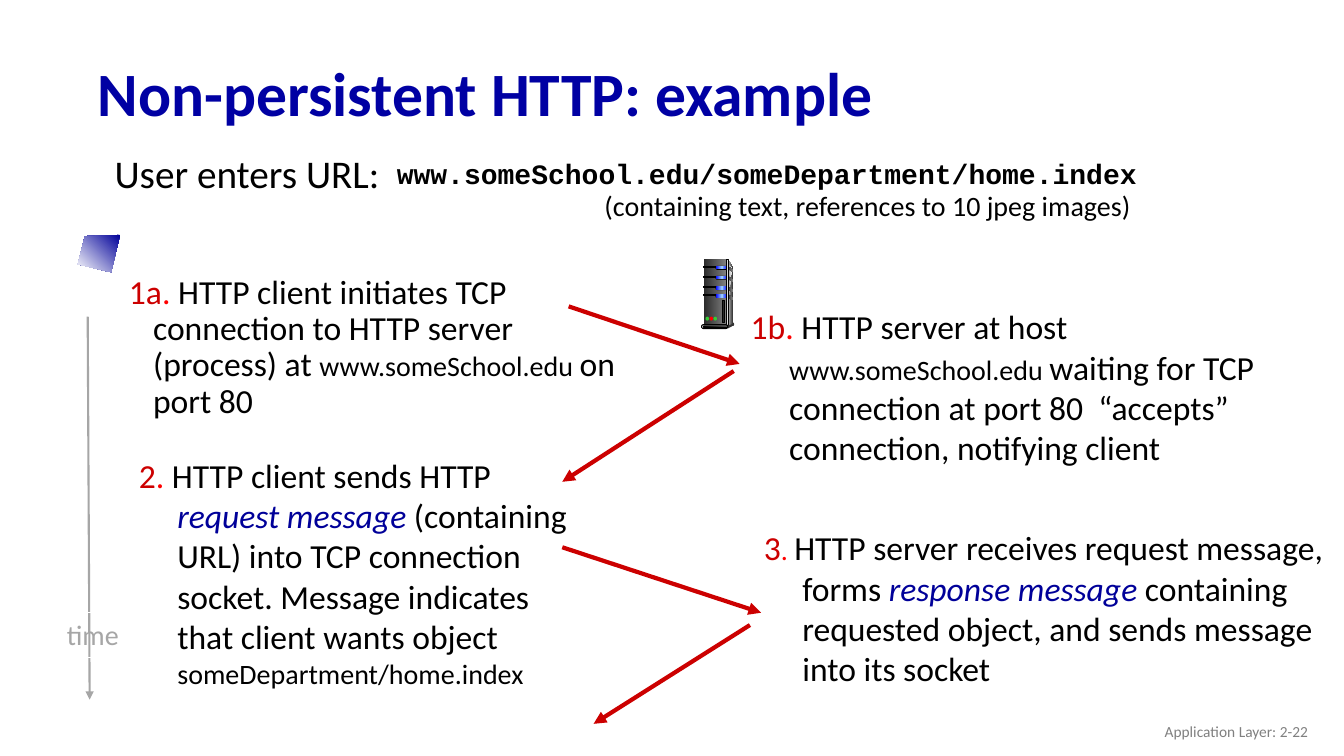
from lxml.etree import SubElement
from pptx import Presentation
from pptx.dml.color import RGBColor
from pptx.enum.shapes import MSO_CONNECTOR, MSO_SHAPE
from pptx.enum.text import MSO_ANCHOR, PP_ALIGN
from pptx.oxml.ns import qn
from pptx.util import Cm, Pt

COLORS = {
    "title": "0000A3", "black": "000000", "navy": "000099", "white": "FFFFFF",
    "step": "CC0000", "red": "FF0000", "green": "33CC33", "time": "A6A6A6",
    "footer": "808080", "pale": "DDDDDD", "dark": "333333", "coal": "292929",
    "grey": "808080", "mist": "F8F8F8", "blue": "0000FF", "sky": "99CCFF",
}
FORMATS = {
    "title": {"size": Pt(44), "bold": True, "color": "title"},
    "lead": {"size": Pt(28)},
    "url": {"size": Pt(20), "bold": True, "name": "Courier New"},
    "body": {"size": Pt(24)},
    "small": {"size": Pt(20)},
    "number": {"size": Pt(24), "color": "step"},
    "dot": {"size": Pt(24), "color": "red"},
    "small dot": {"size": Pt(20), "color": "red"},
    "term": {"size": Pt(24), "italic": True, "color": "navy"},
    "time": {"size": Pt(20), "color": "time"},
    "footer": {"size": Pt(11), "color": "footer"},
}
HANGING = (0.97, -0.97)
BULLET = (0.99, -0.61)


def rgb(name):
    return RGBColor.from_string(COLORS[name])


def fill_text(shape, runs, indent=None, wrap=True, anchor=MSO_ANCHOR.TOP, **paragraph_format):
    """Write (text, format name) runs as the one paragraph of a shape."""
    frame = shape.text_frame
    frame.word_wrap = wrap
    frame.vertical_anchor = anchor
    para = frame.paragraphs[0]
    for attribute, value in paragraph_format.items():
        setattr(para, attribute, value)
    if indent:
        properties = para._p.get_or_add_pPr()
        for attribute, length in zip(("marL", "indent"), indent):
            properties.set(attribute, str(int(Cm(length))))
    for text, format_name in runs:
        span = para.add_run()
        span.text = text
        values = {"name": "Calibri", "color": "black", **FORMATS[format_name]}
        span.font.color.rgb = rgb(values.pop("color"))
        for attribute, value in values.items():
            setattr(span.font, attribute, value)


def add_text(page, origin, offset, size, runs, **options):
    lengths = (origin[0] + offset[0], origin[1] + offset[1], *size)
    box = page.shapes.add_textbox(*map(Cm, lengths))
    fill_text(box, runs, **options)


def paint(shape, colors, angle=0, outline=None):
    """Fill with one color, or with an even gradient over several."""
    shape.shadow.inherit = False
    if len(colors) == 1:
        shape.fill.solid()
        shape.fill.fore_color.rgb = rgb(colors[0])
    elif colors:
        shape.fill.gradient()
        shape.fill.gradient_angle = angle
        stops = shape._element.spPr.find(qn("a:gradFill")).find(qn("a:gsLst"))
        stops.clear()
        for index, color in enumerate(colors):
            stop = SubElement(stops, qn("a:gs"), pos=str(100000 * index // (len(colors) - 1)))
            SubElement(stop, qn("a:srgbClr"), val=COLORS[color])
    else:
        shape.fill.background()
    if outline:
        shape.line.color.rgb = rgb(outline)
        shape.line.width = Pt(0.75)
    else:
        shape.line.fill.background()


def add_preset(parent, kind, origin, part, colors, outline=None):
    left, top, width, height = part
    lengths = (origin[0] + left, origin[1] + top, width, height)
    shape = parent.shapes.add_shape(kind, *map(Cm, lengths))
    if kind == MSO_SHAPE.ROUNDED_RECTANGLE:
        shape.adjustments[0] = 0.5
    paint(shape, colors, outline=outline)
    return shape


def add_outline(parent, origin, points, colors, angle=0):
    corners = [(Cm(origin[0] + x), Cm(origin[1] + y)) for x, y in points]
    builder = parent.shapes.build_freeform(*corners[0])
    builder.add_line_segments(corners[1:], close=True)
    paint(builder.convert_to_shape(), colors, angle)


def add_arrow(page, ends, color, width):
    arrow = page.shapes.add_connector(MSO_CONNECTOR.STRAIGHT, *map(Cm, ends))
    arrow.line.color.rgb = rgb(color)
    arrow.line.width = Pt(width)
    properties = arrow._element.spPr
    SubElement(properties.find(qn("a:ln")), qn("a:tailEnd"), type="triangle")
    SubElement(properties, qn("a:effectLst"))


def draw_heading(page, origin):
    add_text(page, origin, (0, 0), (29.21, 2.49), [("Non-persistent HTTP: example", "title")],
             anchor=MSO_ANCHOR.MIDDLE, line_spacing=0.9)
    add_text(page, origin, (0.05, 2.57), (22.07, 1.3), [("User enters URL:", "lead")],
             indent=BULLET, line_spacing=0.9, space_before=Pt(10))
    add_text(page, origin, (10.79, 3.43), (17.73, 1.12),
             [("(containing text, references to 10 jpeg images)", "small")],
             alignment=PP_ALIGN.CENTER)
    add_text(page, origin, (7.54, 2.75), (22.07, 1.3),
             [("www.someSchool.edu/someDepartment/home.index", "url")],
             indent=HANGING, line_spacing=0.85)


def draw_timeline(page, origin):
    left, top = origin
    add_arrow(page, (left + 0.81, top, left + 0.86, top + 9.65), "time", 1.5)
    label = add_preset(page, MSO_SHAPE.RECTANGLE, origin, (0, 7.46, 1.88, 1.12), [], "white")
    fill_text(label, [("time", "time")], wrap=False, alignment=PP_ALIGN.CENTER)


def draw_client_steps(page, origin):
    add_text(page, origin, (0, 0), (13.46, 5.28), [
        ("1a", "number"), (".", "dot"),
        (" HTTP client initiates TCP connection to HTTP server (process) at ", "body"),
        ("www.someSchool.edu ", "small"), ("on port 80", "body"),
    ], indent=BULLET, line_spacing=0.9, space_before=Pt(10))
    add_text(page, origin, (0.63, 4.52), (11.71, 3), [
        ("2", "number"), (".", "dot"), (" HTTP client sends HTTP ", "body"),
        ("request message", "term"),
        (" (containing URL) into TCP connection socket. Message indicates"
         " that client wants object ", "body"),
        ("someDepartment/home.index", "small"),
    ], indent=HANGING)


def draw_server_steps(page, origin):
    add_text(page, origin, (0, 0), (14.96, 4.19), [
        ("1b", "number"), (".", "dot"), (" HTTP server at host ", "body"),
        ("www.someSchool.edu ", "small"),
        ("waiting for TCP connection at port 80  “accepts” connection,"
         " notifying client", "body"),
    ], indent=HANGING)
    add_text(page, origin, (0.33, 5.57), (14.99, 5), [
        ("3", "number"), (". ", "small dot"),
        ("HTTP server receives request message, forms ", "body"),
        ("response message", "term"),
        (" containing requested object, and sends message into its socket", "body"),
    ], indent=HANGING)


def draw_messages(page, origin):
    left, top = origin
    for x1, y1, x2, y2 in [(0.16, 0, 4.47, 1.45), (4.32, 1.63, 0, 4.42),
                           (0, 6.07, 5.01, 7.72), (4.73, 8.03, 0.79, 10.52)]:
        add_arrow(page, (left + x1, top + y1, left + x2, top + y2), "step", 3)


def draw_client_screen(page, origin):
    add_outline(page, origin, [(1.07, 0), (0.18, 0.03), (0, 0.74), (0.84, 0.94)],
                ["navy", "white"], angle=225)


def draw_server_tower(page, origin):
    tower = page.shapes.add_group_shape()
    rect, pill, oval = MSO_SHAPE.RECTANGLE, MSO_SHAPE.ROUNDED_RECTANGLE, MSO_SHAPE.OVAL
    shade = ["coal", "grey"]
    add_outline(tower, origin, [(0.66, 0), (0.79, 0.2), (0.79, 1.63), (0.64, 1.7)],
                ["pale", "dark"])
    add_preset(tower, rect, origin, (0.05, 0, 0.58, 1.7), shade)
    add_outline(tower, origin, [(0.66, 0.1), (0.76, 0.23), (0.69, 0.9), (0.66, 1.65)],
                ["grey", "mist"])
    for y in (0.18, 0.43, 0.69, 0.89):
        add_preset(tower, rect, origin, (0.05, y, 0.33, 0.03), ["black"], "black")
        add_preset(tower, pill, origin, (0.35, y - 0.01, 0.33, 0.1), ["black"])
        add_preset(tower, pill, origin, (0.36, y, 0.3, 0.08), ["blue", "sky", "blue"])
        add_outline(tower, origin,
                    [(0.66, y), (0.79, y + 0.08), (0.79, y + 0.15), (0.65, y + 0.05)], shade)
    add_preset(tower, rect, origin, (0.64, 0, 0.03, 1.7), ["dark", "pale", "dark"], "black")
    add_preset(tower, oval, origin, (0.79, 1.6, 0.03, 0.08), ["dark"])
    add_outline(tower, origin, [(0.66, 1.68), (0.66, 1.75), (0.79, 1.68), (0.79, 1.63)], ["dark"])
    add_preset(tower, pill, origin, (0, 1.65, 0.66, 0.1), ["pale"], "black")
    add_preset(tower, pill, origin, (0.05, 1.68, 0.61, 0.05), ["black", "grey"], "black")
    for index, color in enumerate(("green", "red", "green")):
        add_preset(tower, oval, origin, (0.1 + 0.1 * index, 1.45, 0.09, 0.1), [color])
    add_preset(tower, rect, origin, (0.53, 1.04, 0.05, 0.56), ["coal"], "black")


def main():
    deck = Presentation()
    deck.slide_width, deck.slide_height = Cm(33.87), Cm(19.05)
    page = deck.slides.add_slide(deck.slide_layouts[6])
    draw_heading(page, (2.21, 1.19))
    draw_timeline(page, (1.4, 7.98))
    draw_client_steps(page, (2.62, 6.81))
    draw_server_steps(page, (18.67, 7.59))
    draw_messages(page, (14.17, 7.72))
    draw_client_screen(page, (1.96, 5.92))
    draw_server_tower(page, (17.68, 6.53))
    add_text(page, (25.6, 17.91), (0, 0), (7.62, 1.02), [("Application Layer: 2-22", "footer")],
             anchor=MSO_ANCHOR.MIDDLE, alignment=PP_ALIGN.RIGHT)
    deck.save("out.pptx")


if __name__ == "__main__":
    main()
